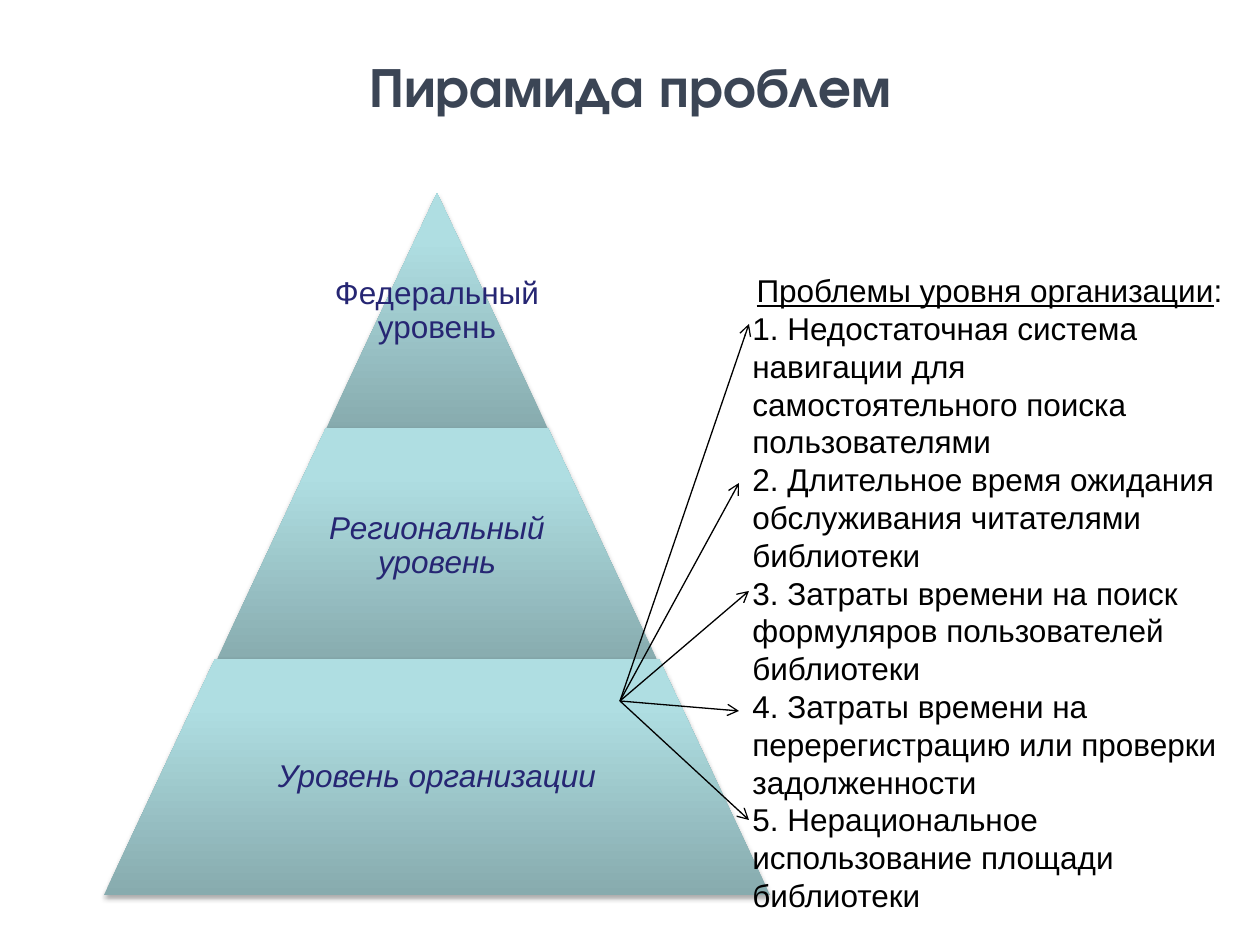
from lxml import etree
from pptx import Presentation
from pptx import util as u
from pptx.dml.color import RGBColor
from pptx.enum import shapes, text
from pptx.oxml import parse_xml
from pptx.oxml.ns import nsdecls, qn

# Content: tiers are (label, italic, top, label width), top to bottom
TITLE = "Пирамида проблем"
TIERS = [
    ("Федеральный уровень", False, 193, 222),
    ("Региональный уровень", True, 428, 288),
    ("Уровень организации", True, 659, 432),
]
HEADING = "Проблемы уровня организации"
PROBLEMS = [
    "Недостаточная система навигации для самостоятельного поиска пользователями",
    "Длительное время ожидания обслуживания читателями библиотеки",
    "Затраты времени на поиск формуляров пользователей библиотеки",
    "Затраты времени на перерегистрацию или проверки задолженности",
    "Нерациональное использование площади библиотеки",
]
ARROW_START = (620, 701)
ARROW_ENDS = [(749, 324), (739, 483), (749, 591), (739, 711), (749, 820)]

THEME = {
    "title": {"name": "TeX Gyre Adventor", "size": u.Pt(32), "bold": True, "color": "3B4555"},
    "label": {"name": "Arial", "size": u.Pt(18), "color": "262673"},
    "problem": {"name": "Arial", "size": u.Pt(18), "color": "000000"},
    "gradient": [(0, "87ABAE"), (80, "AFDEE2"), (100, "AFE0E4")],
    "arrow": "000000",
}

# Pyramid geometry in px: every tier is one top-tier width wider than the last
PX_PER_INCH = 126
AXIS, STEP, TIER_HEIGHT = 437, 222, 236


def px(*lengths):
    return [u.Emu(round(n * 914400 / PX_PER_INCH)) for n in lengths]


def style(run, **values):
    for key, value in values.items():
        if key == "color":
            run.font.color.rgb = RGBColor.from_string(value)
        else:
            setattr(run.font, key, value)


def add_run(paragraph, words, role, **extra):
    run = paragraph.add_run()
    run.text = words
    style(run, **THEME[role], **extra)


def add_tier(slide, left, top, width):
    tier = slide.shapes.add_shape(
        shapes.MSO_SHAPE.TRAPEZOID, *px(left, top, width, TIER_HEIGHT))
    tier.adjustments[0] = STEP / 2 / min(width, TIER_HEIGHT)
    tier.line.fill.background()
    tier.shadow.inherit = False
    # Three-stop gradient running upwards, and a soft shadow below
    tier.fill.gradient()
    tier.fill.gradient_angle = 90
    properties = tier._element.spPr
    stops = properties.find(qn("a:gradFill")).find(qn("a:gsLst"))
    for stop in list(stops):
        stops.remove(stop)
    for position, color in THEME["gradient"]:
        stops.append(parse_xml(
            f'<a:gs {nsdecls("a")} pos="{position * 1000}"><a:srgbClr val="{color}"/></a:gs>'))
    properties.find(qn("a:effectLst")).append(parse_xml(
        f'<a:outerShdw {nsdecls("a")} blurRad="{u.Pt(3.1)}" dist="{u.Pt(1.8)}" dir="5400000" '
        'rotWithShape="0"><a:srgbClr val="000000"><a:alpha val="35000"/></a:srgbClr></a:outerShdw>'))


def add_label(slide, words, italic, left, top, width):
    frame = slide.shapes.add_textbox(*px(left, top, width, TIER_HEIGHT)).text_frame
    frame.word_wrap = True
    frame.vertical_anchor = text.MSO_ANCHOR.MIDDLE
    for side in ("left", "top", "right", "bottom"):
        setattr(frame, f"margin_{side}", u.Inches(0.03))
    label = frame.paragraphs[0]
    label.alignment = text.PP_ALIGN.CENTER
    label.line_spacing = 0.9
    add_run(label, words, "label", italic=italic)


def add_arrow(slide, start, end):
    arrow = slide.shapes.add_connector(shapes.MSO_CONNECTOR.STRAIGHT, *px(*start, *end))
    arrow.line.width = u.Pt(0.75)
    arrow.line.color.rgb = RGBColor.from_string(THEME["arrow"])
    properties = arrow._element.spPr
    etree.SubElement(properties.find(qn("a:ln")), qn("a:tailEnd"), type="arrow")
    etree.SubElement(properties, qn("a:effectLst"))


def main():
    deck = Presentation()
    deck.slide_width, deck.slide_height = u.Inches(10), u.Inches(7.5)
    slide = deck.slides.add_slide(deck.slide_layouts[5])

    # Title
    title = slide.shapes.title
    title.left, title.top, title.width, title.height = px(345, 45, 571, 81)
    title.text_frame.word_wrap = False
    title.text_frame.auto_size = text.MSO_AUTO_SIZE.SHAPE_TO_FIT_TEXT
    heading = title.text_frame.paragraphs[0]
    heading.alignment = text.PP_ALIGN.CENTER
    add_run(heading, TITLE, "title")

    # Pyramid
    for level, (words, italic, top, label_width) in enumerate(TIERS, 1):
        width = STEP * level
        add_tier(slide, AXIS - width / 2, top, width)
        add_label(slide, words, italic, AXIS - label_width / 2, top, label_width)

    # Problems of the lowest tier
    frame = slide.shapes.add_textbox(*px(740, 265, 499, 699)).text_frame
    frame.word_wrap = True
    frame.auto_size = text.MSO_AUTO_SIZE.SHAPE_TO_FIT_TEXT
    heading = frame.paragraphs[0]
    heading.alignment = text.PP_ALIGN.CENTER
    add_run(heading, HEADING, "problem", underline=True)
    add_run(heading, ":", "problem")
    for number, problem in enumerate(PROBLEMS, 1):
        add_run(frame.add_paragraph(), f"{number}. {problem}", "problem")

    # Arrows from the lowest tier to each problem
    for end in ARROW_ENDS:
        add_arrow(slide, ARROW_START, end)

    deck.save("out.pptx")


if __name__ == "__main__":
    main()
